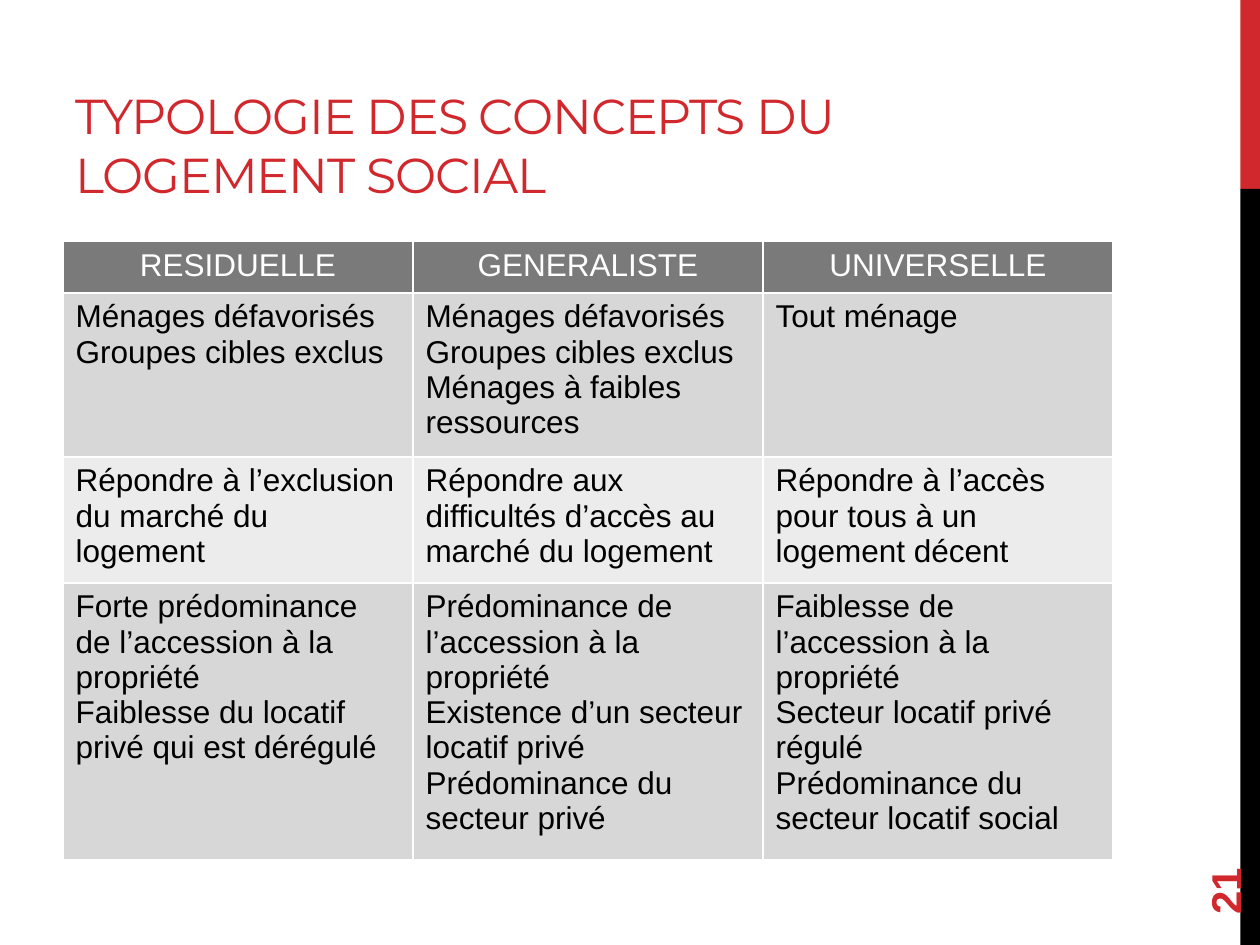
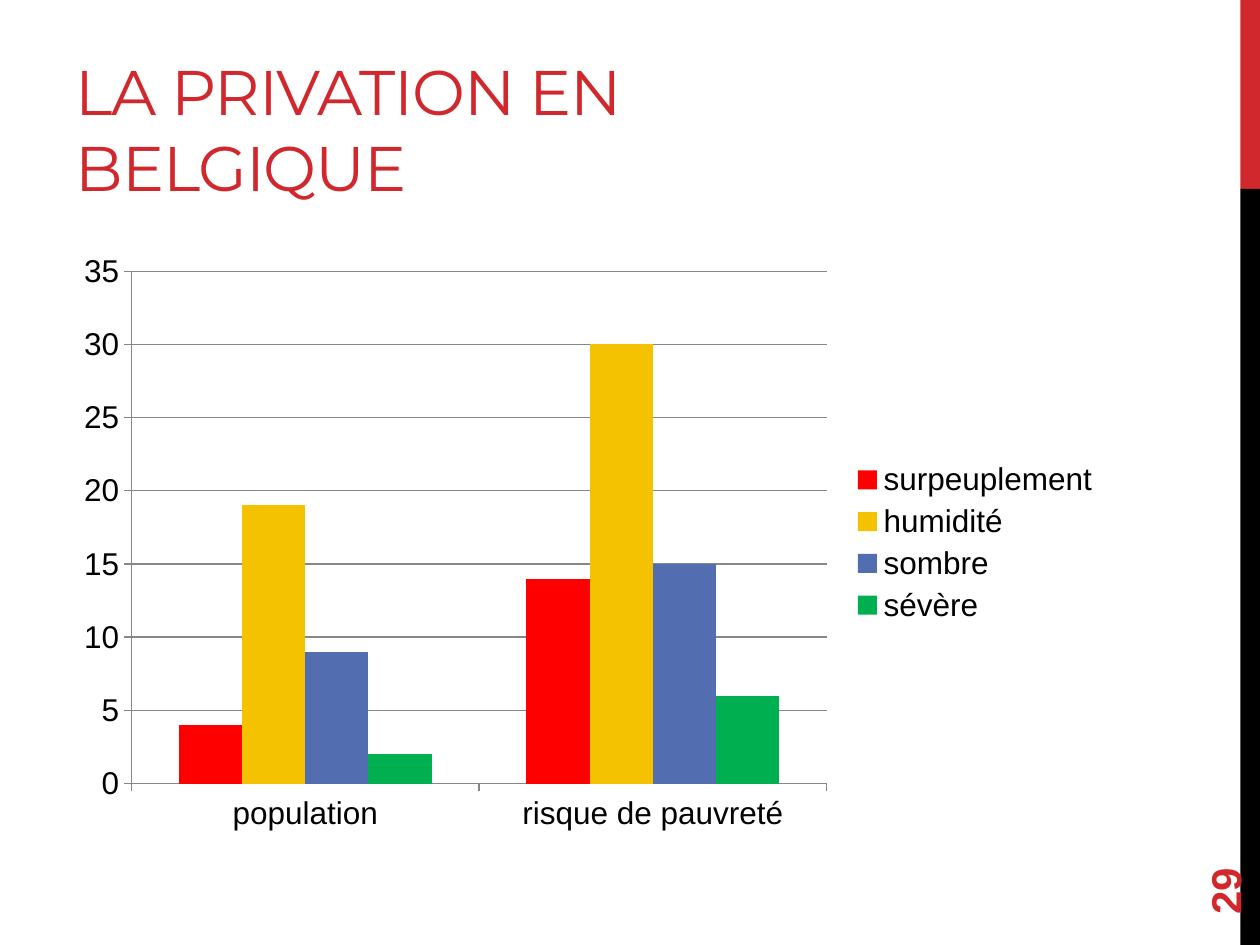
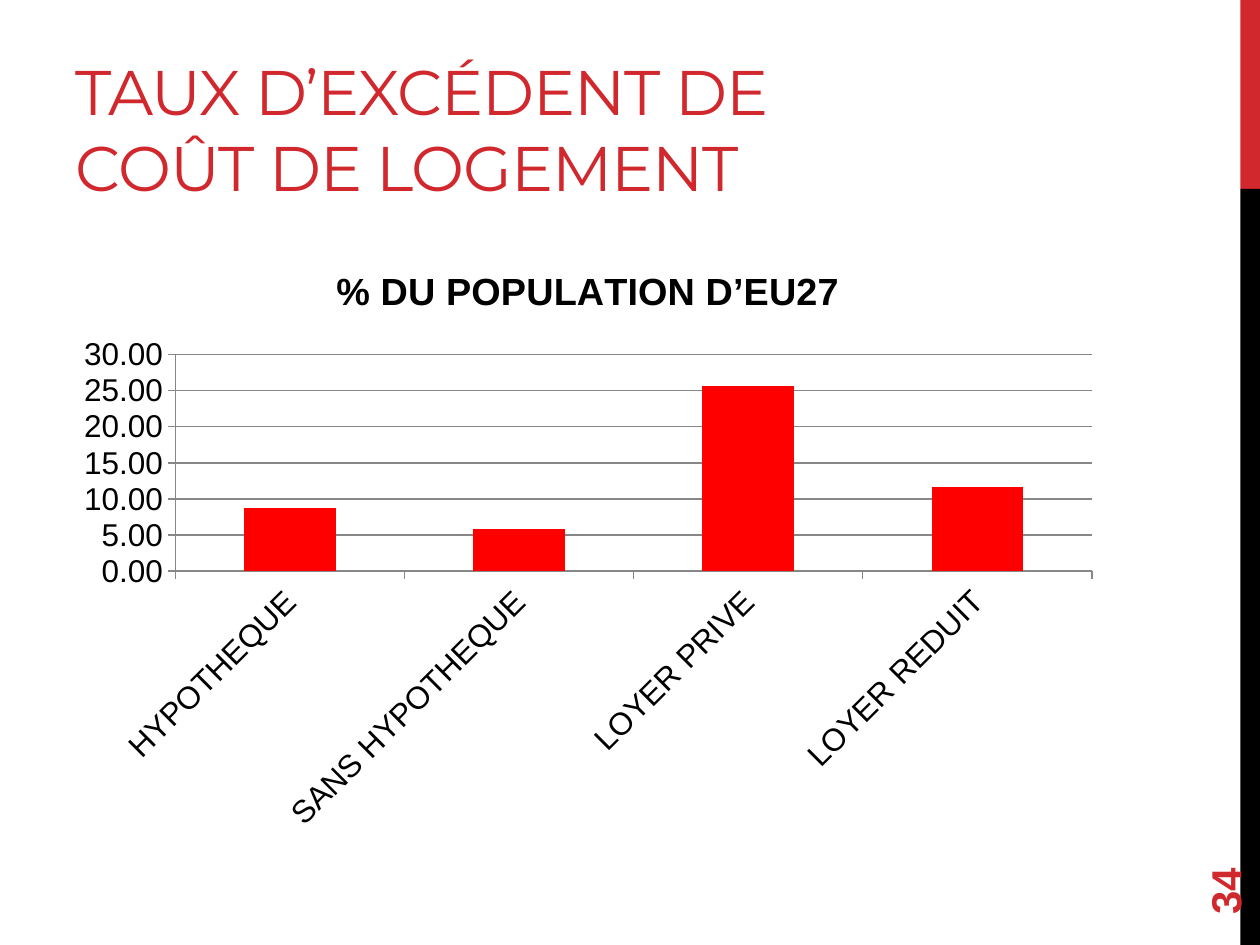
from lxml import etree
from pptx import Presentation
from pptx.chart.data import CategoryChartData
from pptx.dml.color import RGBColor
from pptx.enum import chart as charts, shapes, text
from pptx.oxml import ns
from pptx.util import Pt

RED, BLACK, WHITE, GRAY = "D1282E", "000000", "FFFFFF", "878787"
HEADER, DARK_ROW, LIGHT_ROW = "7A7A7A", "D7D7D7", "ECECEC"
LEFT, TOP, WIDTH = 36, 138, 600


def paint(fill, color):
    fill.solid()
    fill.fore_color.rgb = RGBColor.from_string(color)


def set_font(font, size, color, name="Arial", bold=False):
    font.name, font.size, font.bold = name, Pt(size), bold
    paint(font.fill, color)


presentation = Presentation()
presentation.slide_width, presentation.slide_height = Pt(720), Pt(540)
layout = presentation.slide_layouts[5]

# Titles and page numbers
pages = [
    ("TYPOLOGIE DES CONCEPTS DU LOGEMENT SOCIAL", 28, "21"),
    ("LA PRIVATION EN BELGIQUE", 36, "29"),
    ("TAUX D’EXCÉDENT DE COÛT DE LOGEMENT", 36, "34"),
]
for heading, size, number in pages:
    slide = presentation.slides.add_slide(layout)
    title = slide.shapes.title
    title.left, title.top, title.width, title.height = Pt(LEFT), Pt(12), Pt(456), Pt(108)
    title.text_frame.text = heading
    title.text_frame.auto_size = text.MSO_AUTO_SIZE.NONE
    title.text_frame.vertical_anchor = text.MSO_ANCHOR.BOTTOM
    paragraph = title.text_frame.paragraphs[0]
    paragraph.alignment = text.PP_ALIGN.LEFT
    set_font(paragraph.font, size, RED, "Montserrat")
    paragraph.runs[0]._r.get_or_add_rPr().set("spc", "-60")

    page_number = slide.shapes.add_textbox(Pt(648), Pt(463.5), Pt(103.5), Pt(29))
    page_number.rotation = 270
    page_number.text_frame.word_wrap = True
    page_number.text_frame.vertical_anchor = text.MSO_ANCHOR.MIDDLE
    page_number.text_frame.text = number
    set_font(page_number.text_frame.paragraphs[0].font, 24, RED, bold=True)

typology, deprivation, overburden = presentation.slides

# Side bands, moved to the shared layout
for top, height, color in [(0, 108, RED), (108, 432, BLACK)]:
    band = typology.shapes.add_shape(
        shapes.MSO_SHAPE.RECTANGLE, Pt(708.75), Pt(top), Pt(11.25), Pt(height))
    band.shadow.inherit = False
    paint(band.fill, color)
    band.line.fill.background()
    layout.shapes._spTree.append(band._element)

# Typology table: each cell lists its paragraphs
rows = [
    (29.5, HEADER, ["RESIDUELLE", "GENERALISTE", "UNIVERSELLE"]),
    (88, DARK_ROW, [
        "Ménages défavorisés\nGroupes cibles exclus",
        "Ménages défavorisés\nGroupes cibles exclus\nMénages à faibles ressources",
        "Tout ménage"]),
    (68, LIGHT_ROW, [
        "Répondre à l’exclusion du marché du logement",
        "Répondre aux difficultés d’accès au marché du logement",
        "Répondre à l’accès pour tous à un logement décent"]),
    (148, DARK_ROW, [
        "Forte prédominance de l’accession à la propriété\n"
        "Faiblesse du locatif privé qui est dérégulé",
        "Prédominance de l’accession à la propriété\n"
        "Existence d’un secteur locatif privé\nPrédominance du secteur privé",
        "Faiblesse de l’accession à la propriété\n"
        "Secteur locatif privé régulé\nPrédominance du secteur locatif social"]),
]
table = typology.shapes.add_table(
    len(rows), 3, Pt(LEFT), Pt(TOP), Pt(WIDTH), Pt(sum(row[0] for row in rows))).table
for row_index, (height, color, contents) in enumerate(rows):
    table.rows[row_index].height = Pt(height)
    is_header = row_index == 0
    for column_index, content in enumerate(contents):
        cell = table.cell(row_index, column_index)
        cell.text = content
        properties = cell._tc.get_or_add_tcPr()
        for side in ("lnL", "lnR", "lnT", "lnB"):
            border = etree.SubElement(properties, ns.qn("a:" + side), w=str(Pt(1)))
            border_fill = etree.SubElement(border, ns.qn("a:solidFill"))
            etree.SubElement(border_fill, ns.qn("a:srgbClr"), val=WHITE)
        paint(cell.fill, color)
        for paragraph in cell.text_frame.paragraphs:
            if is_header:
                paragraph.alignment = text.PP_ALIGN.CENTER
            set_font(paragraph.font, 18, WHITE if is_header else BLACK)

# Column charts
column_charts = [
    (deprivation, ["population", "risque de pauvreté"], 35, "General", [
        ("surpeuplement", [4, 14], "FF0000"),
        ("humidité", [19, 30], "F5C201"),
        ("sombre", [9, 15], "526DB0"),
        ("sévère", [2, 6], "00B050")]),
    (overburden, ["HYPOTHEQUE", "SANS HYPOTHEQUE", "LOYER PRIVE", "LOYER REDUIT"],
     30, "0.00", [("Series 1", [8.8, 5.8, 25.6, 11.7], "FF0000")]),
]
for slide, categories, maximum, number_format, series_list in column_charts:
    data = CategoryChartData()
    data.categories = categories
    for name, values, _ in series_list:
        data.add_series(name, values)
    chart = slide.shapes.add_chart(
        charts.XL_CHART_TYPE.COLUMN_CLUSTERED,
        Pt(LEFT), Pt(TOP), Pt(WIDTH), Pt(344), data).chart
    set_font(chart.font, 18, BLACK)
    chart.has_title = False
    chart.has_legend = len(series_list) > 1
    plot = chart.plots[0]
    plot.gap_width, plot.overlap, plot.vary_by_categories = 150, 0, False
    for series, (_, _, color) in zip(plot.series, series_list):
        paint(series.format.fill, color)
    for axis in (chart.category_axis, chart.value_axis):
        axis.major_tick_mark = charts.XL_TICK_MARK.OUTSIDE
        paint(axis.format.line.fill, GRAY)
        set_font(axis.tick_labels.font, 18, BLACK)
    value_axis = chart.value_axis
    value_axis.minimum_scale, value_axis.maximum_scale = 0, maximum
    value_axis.major_unit = 5
    value_axis.tick_labels.number_format = number_format
    value_axis.tick_labels.number_format_is_linked = False
    paint(value_axis.major_gridlines.format.line.fill, GRAY)

    if chart.has_legend:
        chart.legend.position = charts.XL_LEGEND_POSITION.RIGHT
        chart.legend.include_in_layout = False
        set_font(chart.legend.font, 18, BLACK)
    else:
        chart.chart_title.text_frame.text = "% DU POPULATION D’EU27"
        chart.chart_title.include_in_layout = False
        set_font(chart.chart_title.text_frame.paragraphs[0].font, 21.6, BLACK, bold=True)
        label_body = chart.category_axis._element.find(ns.qn("c:txPr")).find(ns.qn("a:bodyPr"))
        label_body.set("rot", str(-45 * 60000))

presentation.save("out.pptx")
